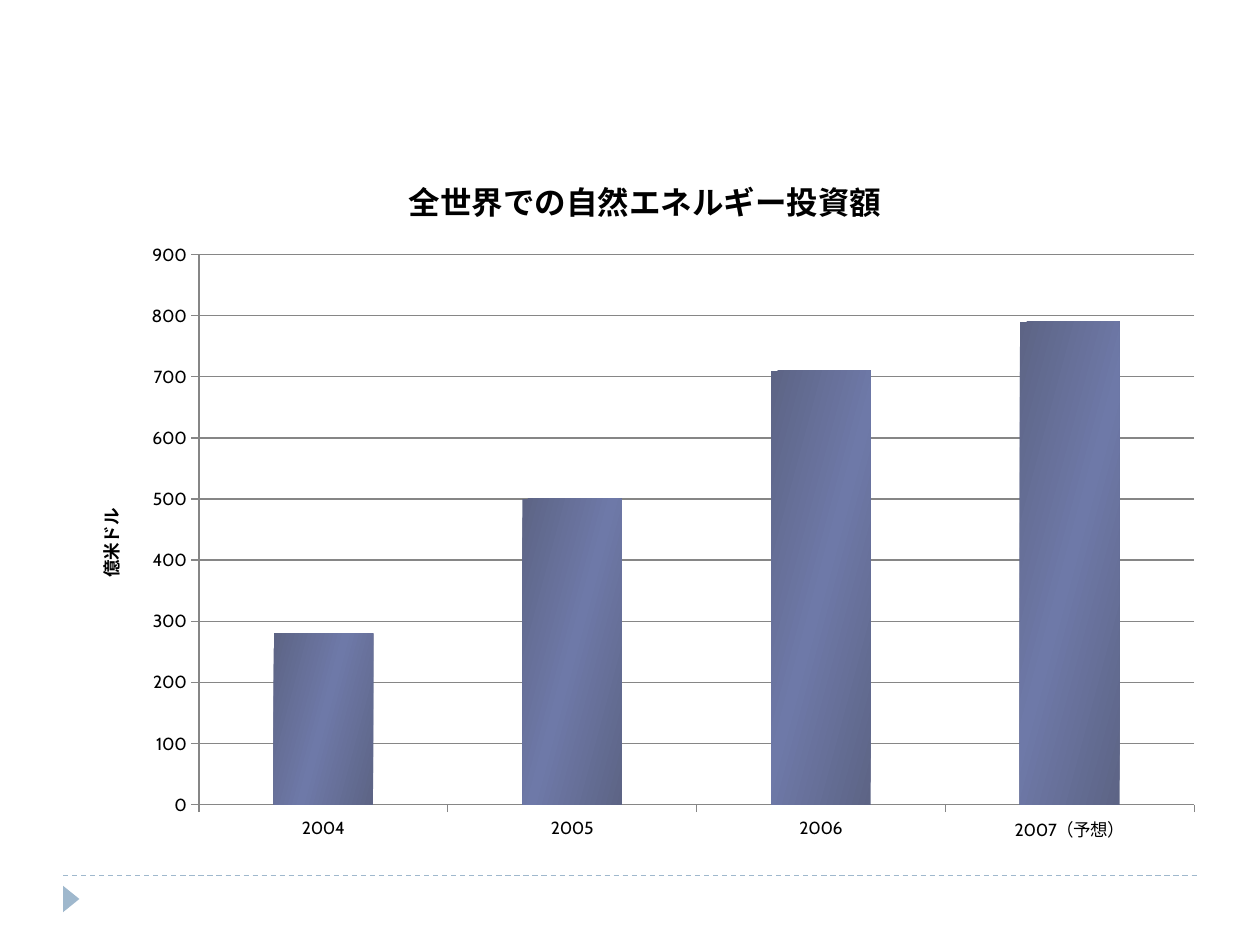
from copy import deepcopy

from lxml.etree import SubElement
from pptx import Presentation
from pptx.chart.data import CategoryChartData
from pptx.dml.color import RGBColor
from pptx.enum.chart import XL_CHART_TYPE, XL_TICK_MARK
from pptx.enum.dml import MSO_LINE
from pptx.enum.shapes import MSO_CONNECTOR, MSO_SHAPE
from pptx.oxml.ns import qn
from pptx.util import Pt

FONT = "Cabin"
COLORS = {
    "text": "000000",
    "rule": "9FB8CD",
    "grid": "868686",
    "bar_edge": "5D6485",
    "bar_middle": "6E79A8",
}


def color(name):
    return RGBColor.from_string(COLORS[name])


def write_text(tf, text, size=10, bold=True, fill="text"):
    tf.text = text
    r = tf.paragraphs[0].runs[0]
    r.font.name = FONT
    r.font.size = Pt(size)
    r.font.bold = bold
    r.font.color.rgb = color(fill)


prs = Presentation()
prs.slide_width, prs.slide_height = Pt(720), Pt(540)
s = prs.slides.add_slide(prs.slide_layouts[6])

rule = s.shapes.add_connector(MSO_CONNECTOR.STRAIGHT, Pt(36), Pt(500.4), Pt(684), Pt(500.4))
rule.line.color.rgb = color("rule")
rule.line.width = Pt(0.75)
rule.line.dash_style = MSO_LINE.DASH
SubElement(rule.element.spPr, qn("a:effectLst"))

marker = s.shapes.add_shape(MSO_SHAPE.ISOSCELES_TRIANGLE, Pt(33.12), Pt(509.04), Pt(15.12), Pt(9.36))
marker.rotation = 90
marker.shadow.inherit = False
marker.fill.solid()
marker.fill.fore_color.rgb = color("rule")
marker.line.fill.background()

data = CategoryChartData()
data.categories = ["2004", "2005", "2006", "2007（予想）"]
data.add_series("Series 1", (280, 500, 710, 790))
chart = s.shapes.add_chart(
    XL_CHART_TYPE.COLUMN_STACKED, Pt(41.76), Pt(84.24), Pt(653.76), Pt(408.24), data
).chart
chart.has_legend = False
chart.font.name = FONT
chart.font.size = Pt(10)
chart.font.color.rgb = color("text")
chart.has_title = True
write_text(chart.chart_title.text_frame, "全世界での自然エネルギー投資額", size=18)

value_axis = chart.value_axis
value_axis.minimum_scale = 0
value_axis.maximum_scale = 900
value_axis.major_unit = 100
value_axis.has_major_gridlines = True
value_axis.has_title = True
write_text(value_axis.axis_title.text_frame, "億米ドル")
for axis in (chart.category_axis, value_axis):
    axis.major_tick_mark = XL_TICK_MARK.OUTSIDE
for lined in (chart.category_axis, value_axis, value_axis.major_gridlines):
    lined.format.line.color.rgb = color("grid")
    lined.format.line.width = Pt(0.75)

plot = chart.plots[0]
plot.gap_width = 150
plot.overlap = 100
plot.vary_by_categories = False
fill = plot.series[0].format.fill
fill.gradient()
fill.gradient_angle = 345
stop_list = next(chart.element.iter(qn("a:gsLst")))
stop_list.insert(1, deepcopy(stop_list[0]))
for stop, position, name in zip(
    fill.gradient_stops, (0, 0.5, 1), ("bar_edge", "bar_middle", "bar_edge")
):
    stop.position = position
    stop.color.rgb = color(name)

plot_area = next(chart.element.iter(qn("c:plotArea")))
layout = plot_area.find(qn("c:layout"))
if layout is None:
    layout = SubElement(plot_area, qn("c:layout"))
    plot_area.insert(0, layout)
manual = SubElement(layout, qn("c:manualLayout"))
for tag, val in (
    ("layoutTarget", "inner"), ("xMode", "edge"), ("yMode", "edge"),
    ("x", "0.11"), ("y", "0.15"), ("w", "0.87"), ("h", "0.77"),
):
    SubElement(manual, qn(f"c:{tag}")).set("val", val)

prs.save("out.pptx")
